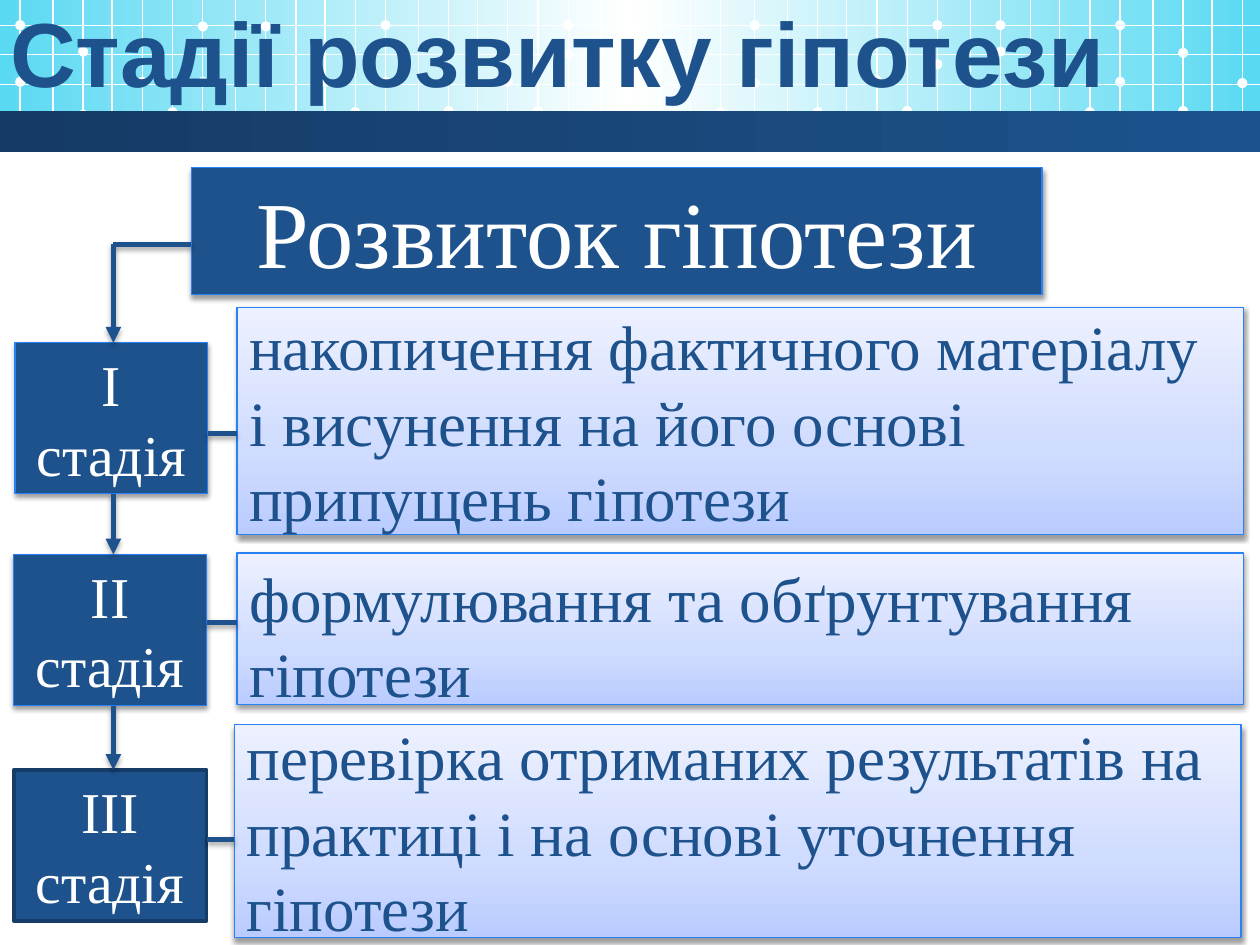
from pptx import Presentation
from pptx.dml.color import RGBColor
from pptx.enum.shapes import MSO_CONNECTOR, MSO_SHAPE
from pptx.enum.text import MSO_ANCHOR, PP_ALIGN
from pptx.oxml import parse_xml
from pptx.oxml.ns import nsdecls, qn
from pptx.util import Inches, Pt

BLUE, EDGE, WHITE = "1D528D", "2981F6", "FFFFFF"
SERIF = "Times New Roman"
SKY = [(0, "5AD9F2"), (50, WHITE), (100, "5AD9F2")]
NAVY = [(0, "153B65"), (100, BLUE)]
PALE = [(0, "BACCFF"), (35, "CFDBFF"), (100, "EDF1FF")]

# Grid of the header: where each block starts, and what repeats inside it
STARTS = [0.16, 3.06, 5.99, 8.89]
RULES = [0, 0.26, 0.5, 0.73, 0.97, 1.21, 1.45, 1.71, 1.95, 2.19, 2.42, 2.66]
ROWS = [0.2, 0.43, 0.67, 0.89]
DOTS = [0, 0, 0.5, 0.5, 0.97, 1.21, 1.45, 1.45, 1.95, 1.95, 2.42, 2.66]
HEIGHTS = [
    [0.65, 0.2, 0.41, 0.91, 0.65, 0.89, 0.65, 0.21, 0.41, 0.21, 0.65, 0.89],
    [0.65, 0.2, 0.41, 0.88, 0.65, 0.88, 0.43, 0.2, 0.42, 0.2, 0.65, 0.89],
    [0.66, 0.2, 0.35, 0.89, 0.64, 0.88, 0.51, 0.2, 0.41, 0.2, 0.65, 0.89],
    [0.65, 0.2, 0.42, 0.88, 0.66],
]

# Label, label box, text, text box, anchor, height of the link, edge, edge width
STAGES = [
    ("І стадія", (0.12, 2.72, 1.53, 1.2),
     "накопичення фактичного матеріалу і висунення на його основі припущень гіпотези",
     (1.88, 2.44, 7.99, 1.8), MSO_ANCHOR.MIDDLE, 3.44, EDGE, 0.75),
    ("ІІ стадія", (0.11, 4.4, 1.53, 1.2),
     "формулювання та обґрунтування гіпотези",
     (1.88, 4.39, 7.99, 1.2), MSO_ANCHOR.TOP, 4.94, EDGE, 0.75),
    ("ІІІ стадія", (0.11, 6.11, 1.53, 1.2),
     "перевірка отриманих результатів на практиці і на основі уточнення гіпотези",
     (1.86, 5.75, 7.99, 1.69), MSO_ANCHOR.MIDDLE, 6.66, "153D68", 2),
]


def color(code):
    return RGBColor.from_string(code)


def paint(shape, fill, angle=0):
    """Fill with one colour, or with a list of gradient stops."""
    if isinstance(fill, str):
        shape.fill.solid()
        shape.fill.fore_color.rgb = color(fill)
        return
    shape.fill.gradient()
    stops = "".join(f'<a:gs pos="{pos * 1000}"><a:srgbClr val="{code}"/></a:gs>'
                    for pos, code in fill)
    props = shape.element.spPr
    props.replace(props.find(qn("a:gradFill")), parse_xml(
        f'<a:gradFill {nsdecls("a")} rotWithShape="1"><a:gsLst>{stops}</a:gsLst>'
        f'<a:lin ang="{angle * 60000}" scaled="0"/></a:gradFill>'))


def shade(shape, alpha, dist):
    """Drop a soft shadow straight down."""
    props = shape.element.spPr
    for old in props.findall(qn("a:effectLst")):
        props.remove(old)
    props.append(parse_xml(
        f'<a:effectLst {nsdecls("a")}><a:outerShdw blurRad="{Pt(3.1)}" '
        f'dist="{Pt(dist)}" dir="5400000" rotWithShape="0"><a:srgbClr val="000000">'
        f'<a:alpha val="{alpha * 1000}"/></a:srgbClr></a:outerShdw></a:effectLst>'))


def add_form(shapes, box, fill, angle=0, kind=MSO_SHAPE.RECTANGLE):
    form = shapes.add_shape(kind, *map(Inches, box))
    form.shadow.inherit = False
    paint(form, fill, angle)
    form.line.fill.background()
    return form


def add_line(shapes, start, end, code, width):
    line = shapes.add_connector(MSO_CONNECTOR.STRAIGHT, *map(Inches, start + end))
    line.line.color.rgb = color(code)
    line.line.width = Pt(width)
    line.element.spPr.append(parse_xml(f'<a:effectLst {nsdecls("a")}/>'))
    return line


def add_link(shapes, start, end, arrow=False):
    link = add_line(shapes, start, end, BLUE, 3)
    if arrow:
        link.line._get_or_add_ln().append(
            parse_xml(f'<a:tailEnd {nsdecls("a")} type="triangle"/>'))
    shade(link, 35, 1.8)


def write(frame, text, size, code, font=SERIF, align=PP_ALIGN.CENTER):
    frame.word_wrap = True
    par = frame.paragraphs[0]
    par.alignment = align
    run = par.add_run()
    run.text = text
    run.font.name = font
    run.font.size = Pt(size)
    run.font.color.rgb = color(code)
    return par, run


def add_card(shapes, box, fill, text, size, code, anchor,
             align=PP_ALIGN.CENTER, edge=EDGE, width=0.75):
    card = add_form(shapes, box, fill, 270)
    card.line.color.rgb = color(edge)
    card.line.width = Pt(width)
    if edge == EDGE:
        shade(card, 38, 1.6)
    card.text_frame.vertical_anchor = anchor
    write(card.text_frame, text, size, code, align=align)


def add_header(slide, box):
    left, top, wide, high = box
    add_form(slide.shapes, (left, top, wide, 1.02), SKY)
    grid = slide.shapes.add_group_shape().shapes
    for start, heights in zip(STARTS, HEIGHTS):
        for step in RULES:
            x = left + start + step
            if x < left + wide:
                add_line(grid, (x, top), (x, top + 1.1), WHITE, 0.75)
        for step, y in zip(DOTS, heights):
            add_form(grid, (left + start + step - 0.04, top + y - 0.04, 0.08, 0.08),
                     WHITE, kind=MSO_SHAPE.OVAL)
    for y in ROWS:
        add_line(grid, (left, top + y), (left + wide, top + y), WHITE, 0.75)
    add_form(slide.shapes, (left, top + high - 0.33, wide, 0.33), NAVY)


def add_title(slide, box, text):
    title = slide.shapes.title
    title.left, title.top, title.width, title.height = map(Inches, box)
    title.element.getparent().append(title.element)  # in front of the header
    title.text_frame.vertical_anchor = MSO_ANCHOR.TOP
    par, run = write(title.text_frame, text, 52, BLUE, "Arial")
    par.line_spacing = 0.8
    run.font.bold = True


def add_stages(shapes, head):
    """Place the head card, then the chain of stages under it."""
    add_card(shapes, head, BLUE, "Розвиток гіпотези", 54, WHITE, MSO_ANCHOR.TOP)
    axis, bend = 0.9, head[1] + 0.61
    add_link(shapes, (axis, bend), (head[0], bend))
    above = bend
    for label, tag, text, body, anchor, y, edge, width in STAGES:
        add_card(shapes, tag, BLUE, label, 33, WHITE, anchor, edge=edge, width=width)
        add_card(shapes, body, PALE, text, 36, BLUE, anchor, PP_ALIGN.LEFT)
        add_link(shapes, (axis, above), (axis, tag[1]), arrow=True)
        add_link(shapes, (tag[0] + tag[2], y), (body[0], y))
        above = tag[1] + tag[3]


def main():
    deck = Presentation()
    deck.slide_width, deck.slide_height = Inches(10), Inches(7.5)
    slide = deck.slides.add_slide(deck.slide_layouts[5])
    add_header(slide, (0, 0, 10, 1.21))
    add_title(slide, (-0.28, 0.09, 9.41, 0.83), "Стадії розвитку гіпотези")
    add_stages(slide.shapes, (1.52, 1.33, 6.75, 1.01))
    deck.save("out.pptx")


if __name__ == "__main__":
    main()
